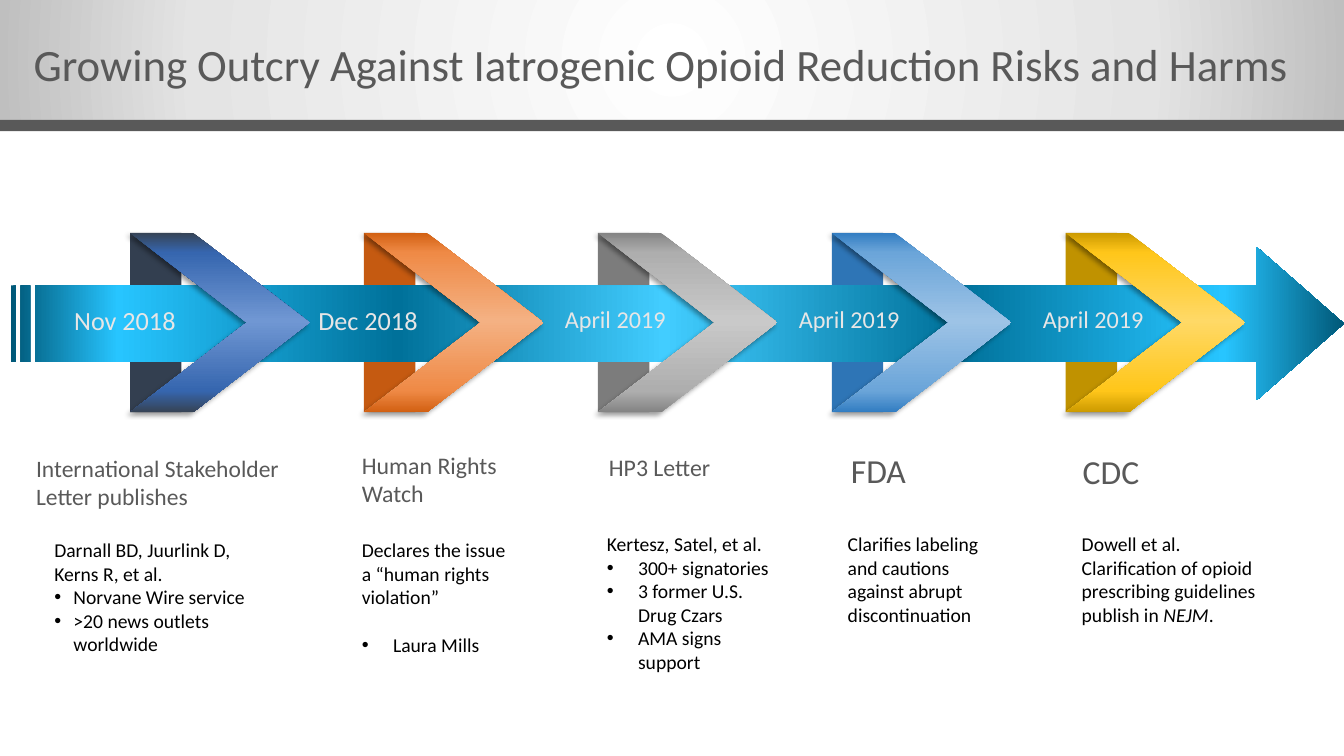
from dataclasses import dataclass

from lxml import etree
from pptx import Presentation
from pptx.dml.color import RGBColor
from pptx.enum.shapes import MSO_SHAPE
from pptx.enum.text import MSO_ANCHOR, PP_ALIGN
from pptx.oxml.ns import nsdecls, qn
from pptx.util import Inches, Pt

RECT, CHEVRON = MSO_SHAPE.RECTANGLE, MSO_SHAPE.CHEVRON
STRIPED_ARROW = MSO_SHAPE.STRIPED_RIGHT_ARROW
TOP = MSO_ANCHOR.TOP
LEFT, CENTER, RIGHT = PP_ALIGN.LEFT, PP_ALIGN.CENTER, PP_ALIGN.RIGHT

TITLE = "Growing Outcry Against Iatrogenic Opioid Reduction Risks and Harms"

# Text and its box (left, top, width, height) in inches; *stars* mark italics
MILESTONES = [
    {"date": "Nov 2018", "date_left": 0.62, "date_size": 18.7,
     "heading": "International Stakeholder Letter publishes",
     "heading_box": (0.26, 4.45, 2.84, 0.69), "heading_size": 16.8,
     "intro": "Darnall BD, Juurlink D, Kerns R, et al.",
     "bullets": ["Norvane Wire service", ">20 news outlets worldwide"],
     "indent": 0.19, "gap": 0, "detail_box": (0.44, 5.29, 2.2, 1.43),
     "back": "333F50", "front": ("364355", "3666AF", "7097D3")},
    {"date": "Dec 2018", "date_left": 3.02, "date_size": 18.7,
     "heading": "Human Rights Watch",
     "heading_box": (3.49, 4.42, 2.02, 0.54), "heading_size": 17,
     "intro": "Declares the issue a “human rights violation”",
     "bullets": ["Laura Mills"],
     "indent": 0.31, "gap": 17, "detail_box": (3.49, 5.29, 1.63, 1.71),
     "back": "C55A11", "front": ("D26012", "EF8A46", "F4B183")},
    {"date": "April 2019", "date_left": 5.48, "date_size": 17.3,
     "heading": "HP3 Letter",
     "heading_box": (5.94, 4.44, 1.78, 0.54), "heading_size": 17,
     "intro": "Kertesz, Satel, et al.",
     "bullets": ["300+ signatories", "3 former U.S. Drug Czars", "AMA signs support"],
     "indent": 0.31, "gap": 0, "detail_box": (5.92, 5.23, 1.92, 1.71),
     "back": "7C7C7C", "front": ("848484", "AEAEAE", "C9C9C9")},
    {"date": "April 2019", "date_left": 7.8, "date_size": 17.3,
     "heading": "FDA",
     "heading_box": (8.34, 4.41, 1.78, 0.54), "heading_size": 24,
     "intro": "Clarifies labeling and cautions against abrupt discontinuation",
     "bullets": [], "indent": 0, "gap": 0, "detail_box": (8.31, 5.23, 1.63, 1.71),
     "back": "2E75B6", "front": ("327DC2", "6BA5D9", "9DC3E6")},
    {"date": "April 2019", "date_left": 10.22, "date_size": 17.3,
     "heading": "CDC",
     "heading_box": (10.64, 4.42, 1.78, 0.54), "heading_size": 24,
     "intro": "Dowell et al. Clarification of opioid prescribing guidelines "
              "publish in *NEJM*.",
     "bullets": [], "indent": 0, "gap": 0, "detail_box": (10.63, 5.23, 2.09, 1.71),
     "back": "C09200", "front": ("CC9A00", "FFC61A", "FFD966")},
]


@dataclass(frozen=True)
class Theme:
    font: str = "Calibri"
    grey: str = "595959"
    black: str = "000000"
    date: str = "E7E6E6"
    title_size: float = 32
    detail_size: float = 14
    arrow: tuple = ((0, "005878"), (8, "27C5FF"), (29, "00719A"), (49, "42CDFF"),
                    (71, "00719A"), (91, "27C5FF"), (100, "005878"))
    band: tuple = ((0, "FFFFFF"), (71, "E4E4E4"), (100, "BFBFBF"))
    chevron_stops: tuple = (0, 11, 49, 88, 100)


THEME = Theme()
FIRST_CHEVRON, CHEVRON_STEP = 1.29, 2.32
CHEVRON_TOP, CHEVRON_SIZE, FOLD_WIDTH = 2.31, 1.78, 0.51
LINEAR = '<a:lin ang="{}" scaled="0"/>'
RADIAL = ('<a:path path="circle"><a:fillToRect l="50000" t="50000" '
          'r="50000" b="50000"/></a:path>')


def add_part(page, kind, box, color=None):
    part = page.shapes.add_shape(kind, *map(Inches, box))
    part.shadow.inherit = False
    part.line.fill.background()
    if color:
        part.fill.solid()
        part.fill.fore_color.rgb = RGBColor.from_string(color)
    return part


def set_gradient(part, stops, direction):
    """Fill with any number of (percent, colour) stops."""
    part.fill.background()
    marks = "".join(f'<a:gs pos="{percent * 1000}"><a:srgbClr val="{color}"/></a:gs>'
                    for percent, color in stops)
    gradient = etree.fromstring(f'<a:gradFill {nsdecls("a")} rotWithShape="1">'
                                f'<a:gsLst>{marks}</a:gsLst>{direction}</a:gradFill>')
    properties = part.element.spPr
    properties.replace(properties.find(qn("a:noFill")), gradient)


def add_shadow(part):
    effects = part.element.spPr.find(qn("a:effectLst"))
    shadow = etree.SubElement(effects, qn("a:outerShdw"), blurRad=str(Pt(4)),
                              dist=str(Pt(3)), dir=str(135 * 60000), rotWithShape="0")
    color = etree.SubElement(shadow, qn("a:srgbClr"), val=THEME.black)
    etree.SubElement(color, qn("a:alpha"), val="40000")


def write(para, text, size, color, align=LEFT):
    para.alignment = align
    for index, piece in enumerate(text.split("*")):
        span = para.add_run()
        span.text = piece
        span.font.name = THEME.font
        span.font.size = Pt(size)
        span.font.italic = index % 2 == 1
        span.font.color.rgb = RGBColor.from_string(color)


def add_text(page, box, text, size, color, align=LEFT):
    frame = page.shapes.add_textbox(*map(Inches, box)).text_frame
    frame.word_wrap = True
    write(frame.paragraphs[0], text, size, color, align)
    return frame


def add_bullet(frame, text, indent):
    para = frame.add_paragraph()
    write(para, text, THEME.detail_size, THEME.black)
    properties = para._p.get_or_add_pPr()
    properties.set("marL", str(Inches(indent)))
    properties.set("indent", str(-Inches(indent)))
    etree.SubElement(properties, qn("a:buFont"), typeface="Arial")
    etree.SubElement(properties, qn("a:buChar"), char="•")
    return para


def add_title(page):
    title = page.shapes.title
    band = add_part(page, RECT, (0, 0, 13.33, 1.19))
    set_gradient(band, THEME.band, RADIAL)
    rule = add_part(page, RECT, (0, 1.19, 13.33, 0.11), THEME.grey)
    for backdrop in (band, rule):
        title.element.addprevious(backdrop.element)
    title.left, title.top = Inches(-0.44), Inches(0.31)
    title.width, title.height = Inches(14), Inches(0.74)
    title.text_frame.vertical_anchor = TOP
    title.text_frame.word_wrap = True
    write(title.text_frame.paragraphs[0], TITLE, THEME.title_size, THEME.grey, CENTER)


def add_timeline(page):
    lefts = [FIRST_CHEVRON + CHEVRON_STEP * index for index in range(len(MILESTONES))]
    for left, milestone in zip(lefts, MILESTONES):
        add_part(page, RECT, (left, CHEVRON_TOP, FOLD_WIDTH, CHEVRON_SIZE),
                 milestone["back"])

    arrow = add_part(page, STRIPED_ARROW, (0.11, 2.45, 13.22, 1.52))
    arrow.adjustments[0], arrow.adjustments[1] = 0.5, 0.57
    set_gradient(arrow, THEME.arrow, LINEAR.format(0))

    for left, milestone in zip(lefts, MILESTONES):
        chevron = add_part(page, CHEVRON, (left, CHEVRON_TOP, CHEVRON_SIZE, CHEVRON_SIZE))
        chevron.adjustments[0] = 0.65
        edge, middle, center = milestone["front"]
        colors = (edge, middle, center, middle, edge)
        set_gradient(chevron, zip(THEME.chevron_stops, colors), LINEAR.format(90 * 60000))
        add_shadow(chevron)


def add_milestone_text(page, milestone):
    add_text(page, (milestone["date_left"], 2.97, 1.22, 0.45), milestone["date"],
             milestone["date_size"], THEME.date, RIGHT)
    add_text(page, milestone["heading_box"], milestone["heading"],
             milestone["heading_size"], THEME.grey)
    details = add_text(page, milestone["detail_box"], milestone["intro"],
                       THEME.detail_size, THEME.black)
    for index, bullet in enumerate(milestone["bullets"]):
        para = add_bullet(details, bullet, milestone["indent"])
        if index == 0 and milestone["gap"]:
            para.space_before = Pt(milestone["gap"])


def main():
    deck = Presentation()
    deck.slide_width, deck.slide_height = Inches(13.33), Inches(7.5)
    page = deck.slides.add_slide(deck.slide_layouts[5])
    add_title(page)
    add_timeline(page)
    for milestone in MILESTONES:
        add_milestone_text(page, milestone)
    deck.save("out.pptx")


if __name__ == "__main__":
    main()
